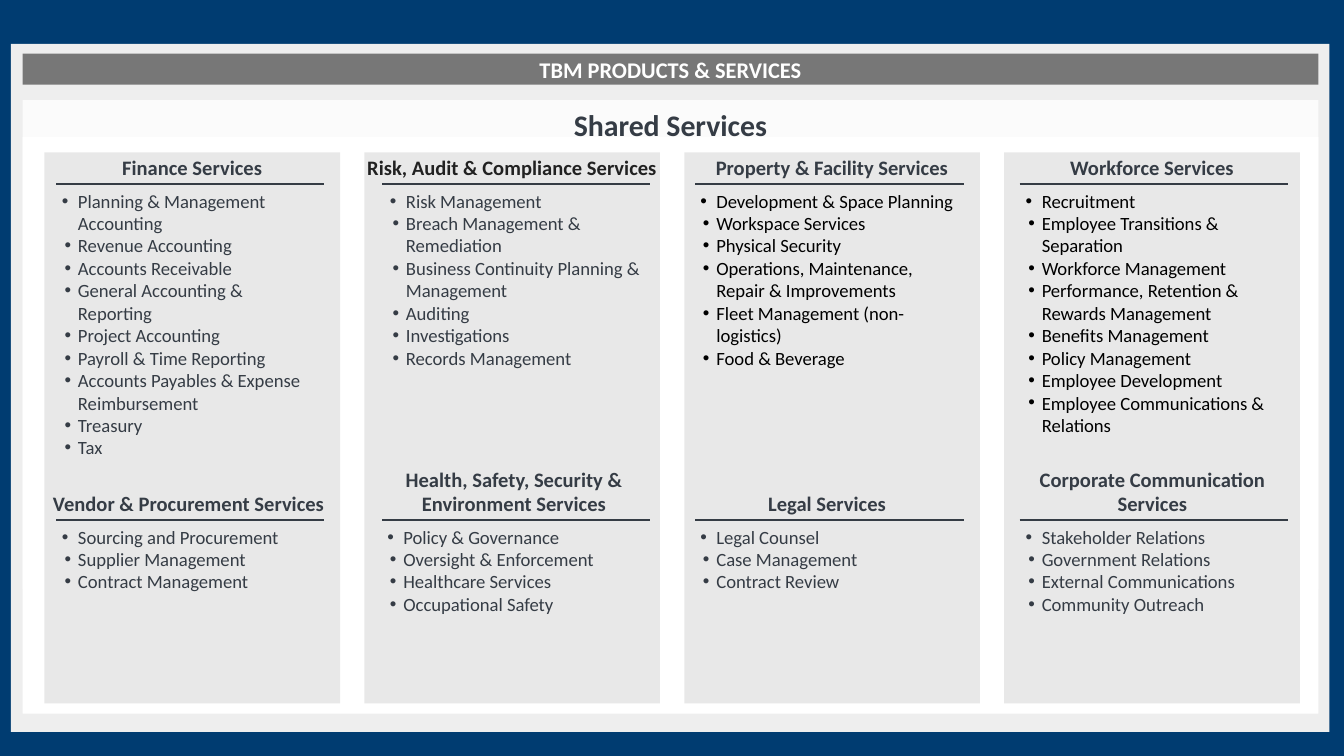
from lxml.etree import SubElement
from pptx import Presentation
from pptx.dml.color import RGBColor
from pptx.enum.shapes import MSO_CONNECTOR, MSO_SHAPE
from pptx.enum.text import MSO_ANCHOR, PP_ALIGN
from pptx.oxml.ns import qn
from pptx.util import Pt

NAVY = RGBColor(0x00, 0x3C, 0x71)
FRAME_GRAY = RGBColor(0xEE, 0xEE, 0xEE)
OFF_WHITE = RGBColor(0xFB, 0xFB, 0xFB)
WHITE = RGBColor(0xFF, 0xFF, 0xFF)
BANNER_GRAY = RGBColor(0x77, 0x77, 0x77)
CARD_GRAY = RGBColor(0xE8, 0xE8, 0xE8)
SLATE = RGBColor(0x35, 0x3C, 0x45)
CHARCOAL = RGBColor(0x21, 0x21, 0x21)
BLACK = RGBColor(0x00, 0x00, 0x00)

CARD_LEFT, CARD_STEP, CARD_WIDTH = 23.8, 171.4, 158.4
UPPER_RULE, LOWER_RULE = 98.6, 278.6
RULE_WIDTH, LIST_WIDTH = 143.6, 144
LIST_INDENT, FIRST_HANGING, HANGING = 9.4, 8.6, 7.2

# One entry per column: x of rule, upper list and lower list, then
# (heading, heading colour, list colour, items) for the upper and lower group.
COLUMNS = [
    (30.2, 29.5, 29.5,
     ("Finance Services", SLATE, SLATE,
      ["Planning & Management Accounting", "Revenue Accounting",
       "Accounts Receivable", "General Accounting & Reporting",
       "Project Accounting", "Payroll & Time Reporting",
       "Accounts Payables & Expense Reimbursement", "Treasury", "Tax"]),
     ("Vendor & Procurement Services", SLATE, SLATE,
      ["Sourcing and Procurement", "Supplier Management",
       "Contract Management"])),
    (204.8, 205.2, 203.8,
     ("Risk, Audit & Compliance Services", CHARCOAL, SLATE,
      ["Risk Management", "Breach Management & Remediation",
       "Business Continuity Planning & Management", "Auditing",
       "Investigations", "Records Management"]),
     ("Health, Safety, Security & Environment Services", SLATE, SLATE,
      ["Policy & Governance", "Oversight & Enforcement",
       "Healthcare Services", "Occupational Safety"])),
    (372.6, 371.5, 371.5,
     ("Property & Facility Services", SLATE, BLACK,
      ["Development & Space Planning", "Workspace Services",
       "Physical Security", "Operations, Maintenance, Repair & Improvements",
       "Fleet Management (non-logistics)", "Food & Beverage"]),
     ("Legal Services", SLATE, SLATE,
      ["Legal Counsel", "Case Management", "Contract Review"])),
    (546.2, 545.8, 545.8,
     ("Workforce Services", SLATE, BLACK,
      ["Recruitment", "Employee Transitions & Separation",
       "Workforce Management", "Performance, Retention & Rewards Management",
       "Benefits Management", "Policy Management", "Employee Development",
       "Employee Communications & Relations"]),
     ("Corporate Communication Services", SLATE, SLATE,
      ["Stakeholder Relations", "Government Relations",
       "External Communications", "Community Outreach"])),
]


class SlideBuilder:
    font_name = "Calibri"

    def __init__(self, slide):
        self.slide = slide

    def add_text(self, paragraph, text, size, color, bold=False):
        run = paragraph.add_run()
        run.text = text
        font_format = {"name": self.font_name, "size": Pt(size), "bold": bold}
        for name, value in font_format.items():
            setattr(run.font, name, value)
        run.font.color.rgb = color

    def format_frame(self, frame, anchor, inset):
        frame_format = {"word_wrap": True, "vertical_anchor": anchor}
        for side in ("left", "top", "right", "bottom"):
            frame_format[f"margin_{side}"] = Pt(inset)
        for name, value in frame_format.items():
            setattr(frame, name, value)

    def panel(self, left, top, width, height, fill):
        shape = self.slide.shapes.add_shape(
            MSO_SHAPE.RECTANGLE, Pt(left), Pt(top), Pt(width), Pt(height))
        shape.shadow.inherit = False
        shape.fill.solid()
        shape.fill.fore_color.rgb = fill
        shape.line.fill.background()
        return shape

    def title_panel(self, box, fill, text, size, color, anchor):
        frame = self.panel(*box, fill).text_frame
        self.format_frame(frame, anchor, 3.6)
        paragraph = frame.paragraphs[0]
        paragraph.alignment = PP_ALIGN.CENTER
        self.add_text(paragraph, text, size, color, bold=True)

    def text_box(self, left, top, width, height, anchor, inset):
        shape = self.slide.shapes.add_textbox(
            Pt(left), Pt(top), Pt(width), Pt(height))
        self.format_frame(shape.text_frame, anchor, inset)
        return shape.text_frame

    def heading(self, left, top, width, text, color):
        frame = self.text_box(left, top, width, 15.8, MSO_ANCHOR.BOTTOM, 0)
        paragraph = frame.paragraphs[0]
        paragraph.alignment = PP_ALIGN.CENTER
        self.add_text(paragraph, text, 11, color, bold=True)

    def rule(self, left, top):
        line = self.slide.shapes.add_connector(
            MSO_CONNECTOR.STRAIGHT, Pt(left), Pt(top),
            Pt(left + RULE_WIDTH), Pt(top))
        line.line.color.rgb = SLATE
        line.line.width = Pt(1)
        SubElement(line._element.spPr, qn("a:effectLst"))

    def bullet(self, paragraph, hanging, color):
        properties = paragraph._p.get_or_add_pPr()
        properties.set("marL", str(Pt(LIST_INDENT)))
        properties.set("indent", str(-Pt(hanging)))
        bullet_color = SubElement(properties, qn("a:buClr"))
        SubElement(bullet_color, qn("a:srgbClr"), val=str(color))
        SubElement(properties, qn("a:buFont"), typeface="Arial")
        SubElement(properties, qn("a:buChar"), char="•")

    def bullet_list(self, left, top, height, items, color):
        frame = self.text_box(left, top, LIST_WIDTH, height,
                              MSO_ANCHOR.TOP, 2.9)
        for index, item in enumerate(items):
            paragraph = frame.add_paragraph() if index else frame.paragraphs[0]
            paragraph.level = 1
            self.bullet(paragraph, HANGING if index else FIRST_HANGING, color)
            self.add_text(paragraph, item, 10, color)


def main():
    presentation = Presentation()
    presentation.slide_width, presentation.slide_height = Pt(720), Pt(405)
    slide = presentation.slides.add_slide(presentation.slide_layouts[6])
    slide.background.fill.solid()
    slide.background.fill.fore_color.rgb = NAVY

    builder = SlideBuilder(slide)
    builder.panel(5.8, 23.5, 706.4, 368.6, FRAME_GRAY)
    builder.title_panel((12.2, 53.7, 694.1, 262), OFF_WHITE,
                        "Shared Services", 16, SLATE, MSO_ANCHOR.TOP)
    builder.panel(12.2, 73.4, 694.1, 308.9, WHITE)
    builder.title_panel((12.2, 28.8, 694.1, 16.6), BANNER_GRAY,
                        "TBM PRODUCTS & SERVICES", 12, WHITE,
                        MSO_ANCHOR.MIDDLE)

    for index, column in enumerate(COLUMNS):
        rule_left, upper_left, lower_left, upper, lower = column
        card_left = CARD_LEFT + index * CARD_STEP
        builder.panel(card_left, 81.7, CARD_WIDTH, 295.2, CARD_GRAY)
        groups = [
            (upper, UPPER_RULE, card_left, CARD_WIDTH, upper_left, 145.4),
            (lower, LOWER_RULE, lower_left - 5.8, 154.8, lower_left, 92.9),
        ]
        for group, top, heading_left, width, list_left, height in groups:
            text, heading_color, list_color, items = group
            builder.heading(heading_left, top - 18, width, text, heading_color)
            builder.rule(rule_left, top)
            builder.bullet_list(list_left, top, height, items, list_color)

    presentation.save("out.pptx")


if __name__ == "__main__":
    main()
